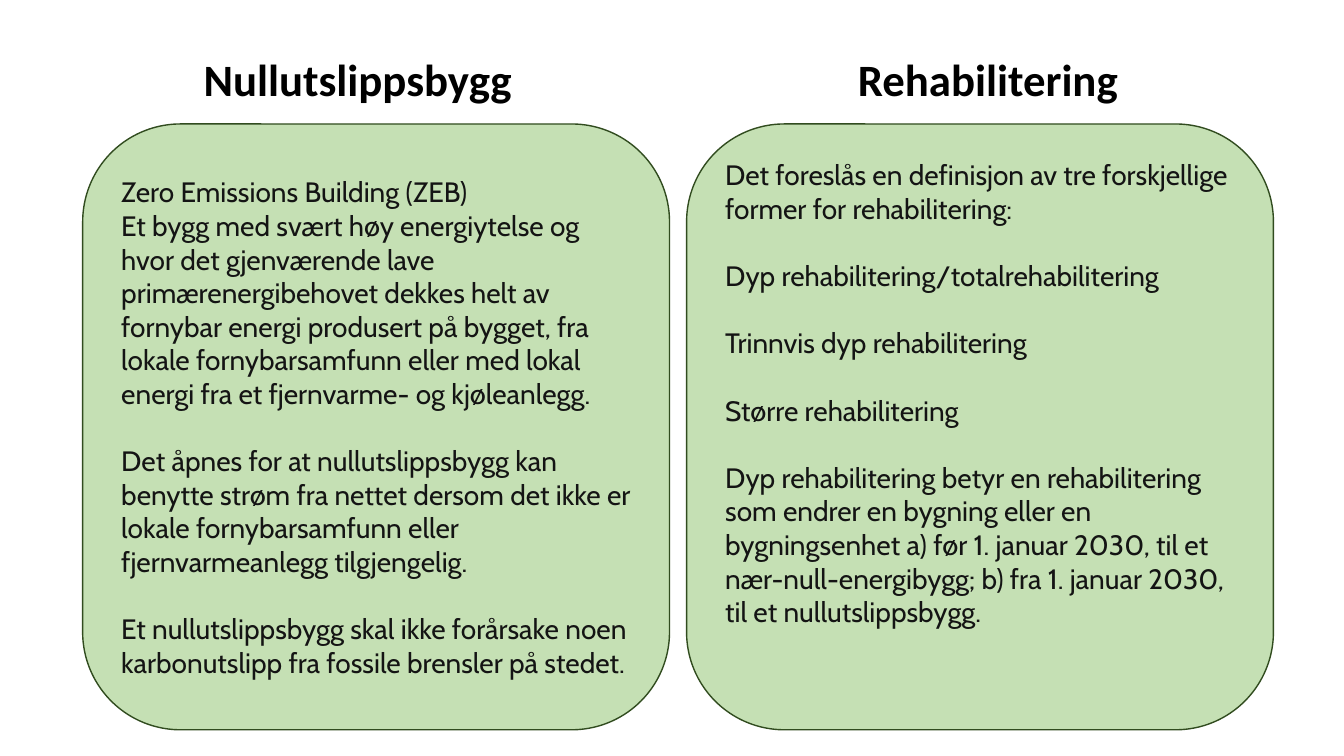
from pptx import Presentation
from pptx import util as u
from pptx.dml import color
from pptx.enum import shapes, text

COLORS = {"heading": "000000", "body": "141414", "panel": "C5E0B4", "outline": "314C1F"}
LINE_GAP = 24

COLUMNS = [
    {
        "heading": "Nullutslippsbygg",
        "heading_left": 1.92,
        "heading_width": 3.35,
        "panel_left": 0.82,
        "bottom_inset": 0.05,
        "paragraphs": [
            ("Zero Emissions Building (ZEB)", 0),
            ("Et bygg med svært høy energiytelse og hvor det gjenværende lave "
             "primærenergibehovet dekkes helt av fornybar energi produsert på bygget, "
             "fra lokale fornybarsamfunn eller med lokal energi fra et fjernvarme- og "
             "kjøleanlegg.", 0),
            ("Det åpnes for at nullutslippsbygg kan benytte strøm fra nettet dersom det "
             "ikke er lokale fornybarsamfunn eller fjernvarmeanlegg tilgjengelig.", LINE_GAP),
            ("Et nullutslippsbygg skal ikke forårsake noen karbonutslipp fra fossile "
             "brensler på stedet.", LINE_GAP),
        ],
    },
    {
        "heading": "Rehabilitering",
        "heading_left": 8.41,
        "heading_width": 2.9,
        "panel_left": 6.81,
        "bottom_inset": 0.72,
        "paragraphs": [
            ("Det foreslås en definisjon av tre forskjellige former for rehabilitering:", 0),
            ("Dyp rehabilitering/totalrehabilitering", LINE_GAP),
            ("Trinnvis dyp rehabilitering", LINE_GAP),
            ("Større rehabilitering", LINE_GAP),
            ("Dyp rehabilitering betyr en rehabilitering som endrer en bygning eller en "
             "bygningsenhet a) før 1. januar 2030, til et nær-null-energibygg; b) fra "
             "1. januar 2030, til et nullutslippsbygg.", LINE_GAP),
        ],
    },
]


class DefinitionSlide:
    def __init__(self, presentation):
        self.slide = presentation.slides.add_slide(presentation.slide_layouts[6])

    def rgb(self, role):
        return color.RGBColor.from_string(COLORS[role])

    def add_run(self, paragraph, wording, font_name, size, role, bold=False):
        run = paragraph.add_run()
        run.text = wording
        run.font.name = font_name
        run.font.size = u.Pt(size)
        run.font.bold = bold
        run.font.color.rgb = self.rgb(role)

    def heading(self, wording, left, width):
        title = self.slide.shapes.add_textbox(
            u.Inches(left), u.Inches(0.46), u.Inches(width), u.Inches(0.64))
        title.text_frame.word_wrap = True
        self.add_run(title.text_frame.paragraphs[0], wording, "Calibri", 32, "heading", True)

    def panel(self, left, bottom_inset, paragraphs):
        definition = self.slide.shapes.add_shape(
            shapes.MSO_SHAPE.ROUNDED_RECTANGLE,
            u.Inches(left), u.Inches(1.23), u.Inches(5.82), u.Inches(6.01))
        definition.shadow.inherit = False
        definition.fill.solid()
        definition.fill.fore_color.rgb = self.rgb("panel")
        definition.line.color.rgb = self.rgb("outline")
        definition.line.width = u.Pt(1)
        frame = definition.text_frame
        frame.word_wrap = True
        frame.vertical_anchor = text.MSO_ANCHOR.MIDDLE
        frame.margin_bottom = u.Inches(bottom_inset)
        for index, (wording, gap) in enumerate(paragraphs):
            paragraph = frame.add_paragraph() if index else frame.paragraphs[0]
            paragraph.alignment = text.PP_ALIGN.LEFT
            if gap:
                paragraph.space_before = u.Pt(gap)
            self.add_run(paragraph, wording, "Cabin", 20, "body")


def main():
    presentation = Presentation()
    presentation.slide_width = u.Inches(13.33)
    presentation.slide_height = u.Inches(7.5)
    definitions = DefinitionSlide(presentation)
    for column in COLUMNS:
        definitions.heading(column["heading"], column["heading_left"], column["heading_width"])
        definitions.panel(column["panel_left"], column["bottom_inset"], column["paragraphs"])
    presentation.save("out.pptx")


if __name__ == "__main__":
    main()
